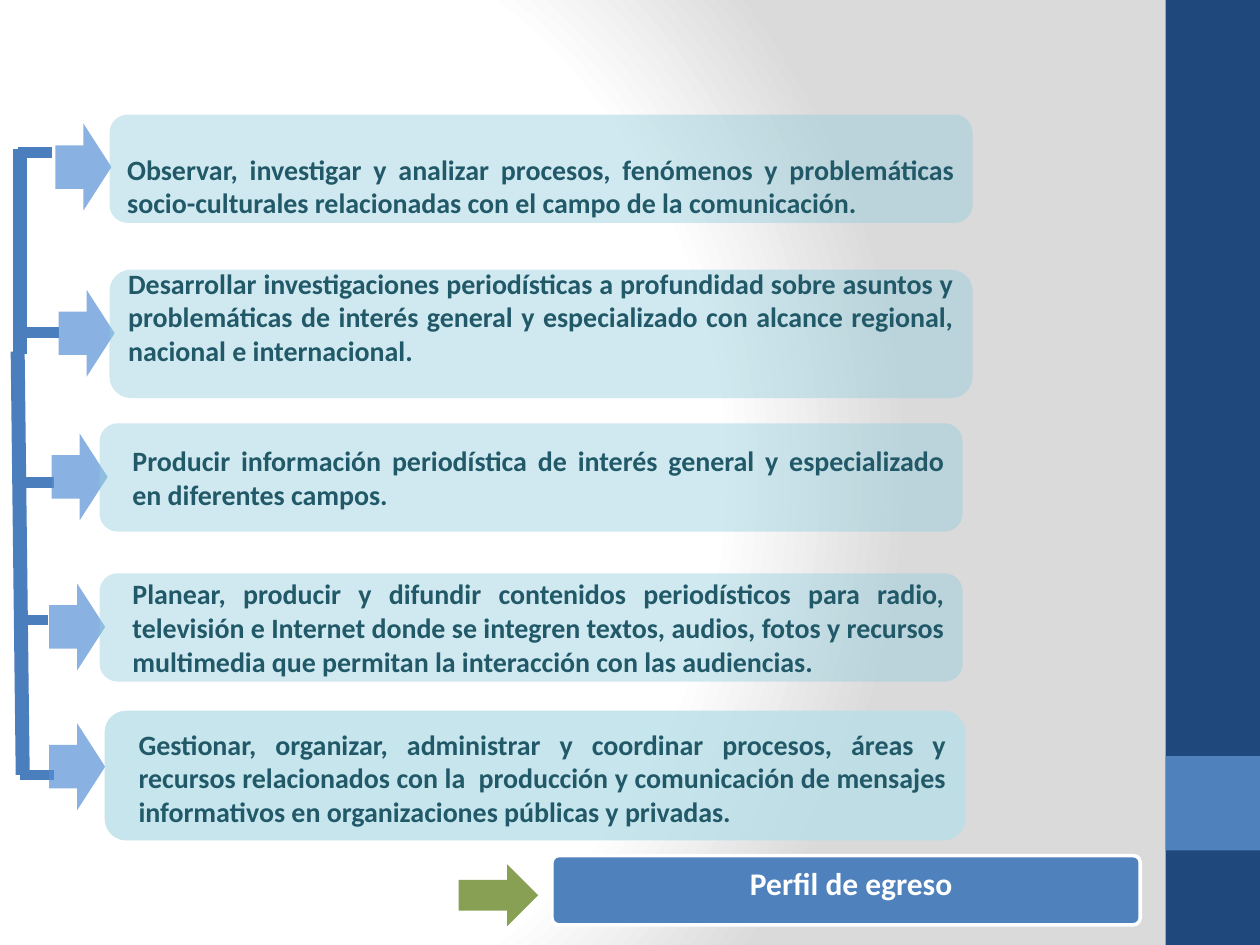
from lxml.etree import SubElement
from pptx import Presentation
from pptx.dml.color import RGBColor
from pptx.enum.shapes import MSO_CONNECTOR, MSO_SHAPE
from pptx.enum.text import MSO_ANCHOR, PP_ALIGN
from pptx.oxml.ns import qn
from pptx.util import Pt

# Content: one entry per skill, with its box, arrow and branch line positions
SKILLS = [
    dict(text="Observar, investigar y analizar procesos, fenómenos y problemáticas "
              "socio-culturales relacionadas con el campo de la comunicación.",
         box=(62.6, 65.5, 493.2, 61.9), arrow=(31.7, 70.6), branch=(10.1, 87.1),
         insets=(7.2, 23.1, 7.2, 3.6)),
    dict(text="Desarrollar investigaciones periodísticas a profundidad sobre asuntos y "
              "problemáticas de interés general y especializado con alcance regional, "
              "nacional e internacional.",
         box=(62.6, 154.1, 493.2, 73.4), arrow=(33.5, 165.6), branch=(14.4, 190.1),
         insets=(7.2, 3.6, 7.2, 23.1)),
    dict(text="Producir información periodística de interés general y especializado "
              "en diferentes campos.",
         box=(56.9, 241.9, 493.2, 61.9), arrow=(29.5, 247.7), branch=(11.5, 275.8),
         insets=(15.8, 3.6, 7.2, 3.6)),
    dict(text="Planear, producir y difundir contenidos periodísticos para radio, "
              "televisión e Internet donde se integren textos, audios, fotos y recursos "
              "multimedia que permitan la interacción con las audiencias.",
         box=(56.9, 327.6, 493.2, 61.9), arrow=(28.1, 333.4), branch=(7.9, 354.2),
         insets=(15.8, 3.6, 7.2, 3.6)),
    dict(text="Gestionar, organizar, administrar y coordinar procesos, áreas y "
              "recursos relacionados con la  producción y comunicación de mensajes "
              "informativos en organizaciones públicas y privadas.",
         box=(59.8, 406.1, 491.8, 74.2), arrow=(28.1, 413.3), branch=(11.5, 442.8),
         insets=(15.8, 3.6, 7.2, 3.6), fill="last_box", anchor=MSO_ANCHOR.BOTTOM),
]
SPINE = [(11.5, 85, 11.5, 202.3), (10.1, 200.9, 13, 442.8)]
TITLE = "Perfil de egreso"
ARROW_SIZE = (32, 49.7)
BRANCH_LENGTH = 19.4

# Fills are (colour, opacity in percent)
THEME = dict(
    font="Calibri", body_size=16, title_size=18,
    text="215968", white="FFFFFF", line="4B7EBC", gray="DADADA",
    band=("1F497D", 100), accent=("4F81BD", 100),
    arrow=("558ED5", 69), title_arrow=("77933C", 88),
    box=("93CDDD", 43), last_box=("B7DEE8", 78),
)


def add_block(slide, kind, bounds, fill):
    """Add a preset shape without outline, filled with a theme entry."""
    shape = slide.shapes.add_shape(kind, *(Pt(value) for value in bounds))
    shape.shadow.inherit = False
    color, opacity = THEME[fill]
    shape.fill.solid()
    shape.fill.fore_color.rgb = RGBColor.from_string(color)
    if opacity < 100:
        node = shape.fill._xPr.find(".//" + qn("a:srgbClr"))
        SubElement(node, qn("a:alpha"), val=str(opacity * 1000))
    shape.line.fill.background()
    return shape


def add_line(slide, points, width):
    line = slide.shapes.add_connector(MSO_CONNECTOR.STRAIGHT,
                                      *(Pt(value) for value in points))
    line.line.color.rgb = RGBColor.from_string(THEME["line"])
    line.line.width = Pt(width)
    SubElement(line._element.spPr, qn("a:effectLst"))


def write_text(shape, text, *, size, color, align, anchor, insets):
    frame = shape.text_frame
    frame.word_wrap = True
    frame.vertical_anchor = anchor
    (frame.margin_left, frame.margin_top,
     frame.margin_right, frame.margin_bottom) = (Pt(value) for value in insets)
    paragraph = frame.paragraphs[0]
    paragraph.alignment = align
    run = paragraph.add_run()
    run.text = text
    run.font.name = THEME["font"]
    run.font.size = Pt(size)
    run.font.bold = True
    run.font.color.rgb = RGBColor.from_string(color)


def paint_background(slide):
    """Radial gradient, white until three quarters, then gray."""
    fill = slide.background.fill
    fill.gradient()
    gradient = fill._xPr.find(qn("a:gradFill"))
    for child in list(gradient):
        gradient.remove(child)
    stops = SubElement(gradient, qn("a:gsLst"))
    for position, color in ((0, "white"), (75, "white"), (100, "gray")):
        stop = SubElement(stops, qn("a:gs"), pos=str(position * 1000))
        SubElement(stop, qn("a:srgbClr"), val=THEME[color])
    circle = SubElement(gradient, qn("a:path"), path="circle")
    SubElement(circle, qn("a:fillToRect"), l="20000", t="50000", r="100000", b="50000")


def main():
    presentation = Presentation()
    presentation.slide_width, presentation.slide_height = Pt(720), Pt(540)
    slide = presentation.slides.add_slide(presentation.slide_layouts[6])
    paint_background(slide)

    # Side band
    add_block(slide, MSO_SHAPE.RECTANGLE, (666, 0, 54, 540), "band")
    add_block(slide, MSO_SHAPE.RECTANGLE, (666, 432, 54, 54), "accent")

    # Title bar and its arrow
    bar = add_block(slide, MSO_SHAPE.ROUNDED_RECTANGLE, (315.4, 488.9, 336.2, 39.6), "accent")
    bar.adjustments[0] = 0.1
    bar.line.color.rgb = RGBColor.from_string(THEME["white"])
    bar.line.width = Pt(2)
    write_text(bar, TITLE, size=THEME["title_size"], color=THEME["white"],
               align=PP_ALIGN.CENTER, anchor=MSO_ANCHOR.TOP, insets=(13, 3.6, 7.2, 3.6))
    add_block(slide, MSO_SHAPE.RIGHT_ARROW, (262.1, 493.9, 45.4, 35.3), "title_arrow")

    # Spine, then a branch, an arrow and a box for each skill
    for points in SPINE:
        add_line(slide, points, 8)
    for skill in SKILLS:
        left, y = skill["branch"]
        add_line(slide, (left, y, left + BRANCH_LENGTH, y), 6)
        add_block(slide, MSO_SHAPE.RIGHT_ARROW, skill["arrow"] + ARROW_SIZE, "arrow")
        box = add_block(slide, MSO_SHAPE.ROUNDED_RECTANGLE, skill["box"],
                        skill.get("fill", "box"))
        write_text(box, skill["text"], size=THEME["body_size"], color=THEME["text"],
                   align=PP_ALIGN.JUSTIFY, anchor=skill.get("anchor", MSO_ANCHOR.MIDDLE),
                   insets=skill["insets"])

    presentation.save("out.pptx")


if __name__ == "__main__":
    main()
